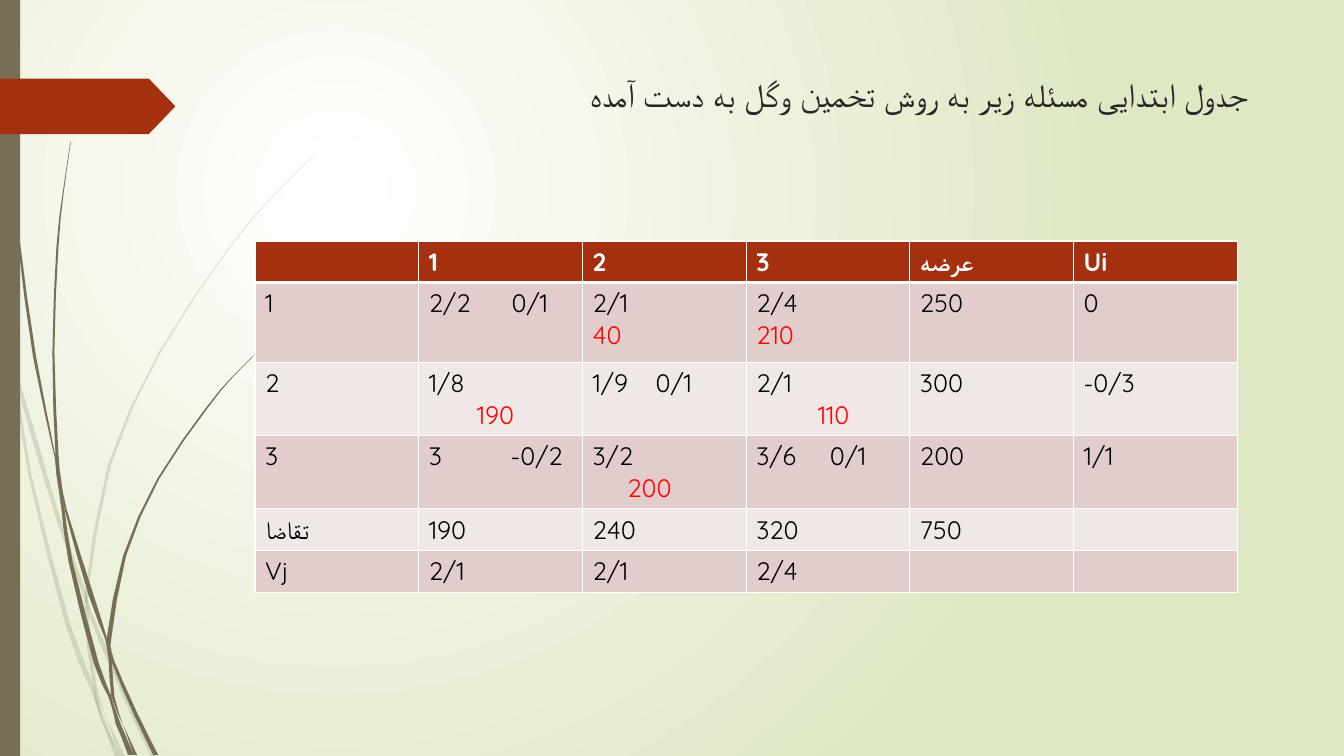
import dataclasses

import pptx
import pptx.dml.color
import pptx.enum.dml
import pptx.enum.shapes
import pptx.enum.text
import pptx.oxml
import pptx.oxml.ns
import pptx.util
from lxml import etree

qn = pptx.oxml.ns.qn


@dataclasses.dataclass(frozen=True)
class Theme:
    """Colours, font and type sizes of the slide."""
    font: str = "Quicksand"
    title: int = 24
    body: int = 18
    dark: str = "262626"
    ink: str = "000000"
    white: str = "FFFFFF"
    red: str = "FF0000"
    rust: str = "A53010"
    olive: str = "766F54"
    edge: str = "DFE8C4"
    bands: tuple = ("F0E8E7", "E1CDCC")


def rgb(code):
    """Turn a hex code into a colour."""
    return pptx.dml.color.RGBColor.from_string(code)


def smooth(knots, steps=2):
    """Run a smooth curve through the knots."""
    ends = [knots[0], *knots, knots[-1]]
    curve = []
    for a, b, c, d in zip(ends, ends[1:], ends[2:], ends[3:]):
        for i in range(steps):
            t = i / steps
            curve.append([
                q + t * (r - p + t * (2 * p - 5 * q + 4 * r - s + t * (3 * q - p - 3 * r + s))) / 2
                for p, q, r, s in zip(a, b, c, d)])
    return curve + [knots[-1]]


class Sheet:
    """Draw on one slide with a grid of 75 rows of square cells."""

    def __init__(self, deck, theme):
        """Add a title-only slide."""
        self.theme = theme
        self.slide = deck.slides.add_slide(deck.slide_layouts[5])
        self.unit = deck.slide_height / 75

    def at(self, *cells):
        """Turn grid cells into lengths."""
        return [pptx.util.Emu(round(n * self.unit)) for n in cells]

    def type(self, para, size, code, bold=False):
        """Set the font of a paragraph, for Latin and Arabic script."""
        font = para.font
        font.name, font.size, font.bold = self.theme.font, pptx.util.Pt(size), bold
        font.color.rgb = rgb(code)
        props = para._p.pPr.find(qn("a:defRPr"))
        etree.SubElement(props, qn("a:cs"), typeface=self.theme.font)

    def paint(self, shape, code, alpha=100):
        """Fill a shape flat, without line or shadow."""
        shape.shadow.inherit = False
        shape.line.fill.background()
        shape.fill.solid()
        shape.fill.fore_color.rgb = rgb(code)
        if alpha < 100:
            tint = shape._element.spPr.find(".//" + qn("a:srgbClr"))
            etree.SubElement(tint, qn("a:alpha"), val=str(alpha * 1000))

    def glow(self, inner, outer):
        """Fill the background with a round gradient."""
        fill = self.slide.background.fill
        fill.gradient()
        for stop, code, place in zip(fill.gradient_stops, (inner, outer), (0, 1)):
            stop.color.rgb, stop.position = rgb(code), place
        grad = self.slide._element.find(".//" + qn("a:gradFill"))
        grad.remove(grad.find(qn("a:lin")))
        ring = etree.SubElement(grad, qn("a:path"), path="circle")
        etree.SubElement(ring, qn("a:fillToRect"), l="50000", t="50000", r="100000", b="100000")

    def shape(self, kind, box, code):
        """Add a flat preset shape."""
        shape = self.slide.shapes.add_shape(kind, *self.at(*box))
        self.paint(shape, code)
        return shape

    def blade(self, knots, code, alpha=100):
        """Add a curved blade through knots of x, y and width."""
        curve = smooth(knots)
        rim = [self.at(x - w / 2, y) for x, y, w in curve]
        rim += [self.at(x + w / 2, y) for x, y, w in reversed(curve) if w]
        form = self.slide.shapes.build_freeform(*rim[0])
        form.add_line_segments(rim[1:], close=True)
        self.paint(form.convert_to_shape(), code, alpha)

    def title(self, text, box):
        """Fill and place the title."""
        head = self.slide.shapes.title
        head.left, head.top, head.width, head.height = self.at(*box)
        frame = head.text_frame
        frame.text = text
        frame.word_wrap = True
        frame.margin_right = self.at(2.1)[0]
        frame.vertical_anchor = pptx.enum.text.MSO_ANCHOR.TOP
        para = frame.paragraphs[0]
        para.alignment = pptx.enum.text.PP_ALIGN.RIGHT
        self.type(para, self.theme.title, self.theme.dark)

    def border(self, cell, top, low):
        """Draw white cell borders."""
        props = cell._tc.get_or_add_tcPr()
        for i, (side, size) in enumerate(zip("LRTB", (1, 1, top, low))):
            line = etree.Element(qn("a:ln" + side), w=str(pptx.util.Pt(size)))
            fill = etree.SubElement(line, qn("a:solidFill"))
            etree.SubElement(fill, qn("a:srgbClr"), val=self.theme.white)
            props.insert(i, line)

    def table(self, rows, spot, wide, highs, gaps):
        """Add the table, with gaps as tab stops or second-line indents."""
        look = self.theme
        size = len(rows), len(rows[0])
        box = self.at(*spot, wide * size[1], sum(highs))
        grid = self.slide.shapes.add_table(*size, *box).table
        for col in grid.columns:
            col.width = self.at(wide)[0]
        for r, (row, high) in enumerate(zip(rows, highs)):
            grid.rows[r].height = self.at(high)[0]
            for c, text in enumerate(row):
                cell = grid.cell(r, c)
                cell.text = text
                cell.fill.solid()
                cell.fill.fore_color.rgb = rgb(look.bands[r % 2] if r else look.rust)
                self.border(cell, 3 if r == 1 else 1, 1 if r else 3)
                gap = str(self.at(gaps.get((r, c), 0))[0])
                for i, para in enumerate(cell.text_frame.paragraphs):
                    props = para._p.get_or_add_pPr()
                    if i:
                        props.set("marL", gap)
                    elif "\t" in text:
                        tabs = etree.SubElement(props, qn("a:tabLst"))
                        etree.SubElement(tabs, qn("a:tab"), pos=gap, algn="l")
                    code = look.red if i else look.ink if r else look.white
                    self.type(para, look.body, code, r == 0)


PALE = [
    [(0, 28.2, 0), (.2, 29.9, .4), (.7, 33, .3), (1.1, 35, 0)],
    [(1.4, 34.5, 0), (1.75, 37.6, .3), (3.35, 43.3, .5), (5.95, 52, .4),
     (8.3, 58.6, .4), (8.4, 59.9, 0)],
    [(8.8, 59.6, 0), (9, 61, .4), (12.5, 69.3, .5), (15.25, 75.1, .5)],
    [(10.5, 71.1, 0), (12.15, 75.1, .5)],
    [(1.1, 35, 0), (1.55, 37.6, .3), (2.95, 47, .3), (6.75, 62, .5),
     (9.2, 68.3, .5), (10.1, 71.4, 0)],
    [(8.4, 59.9, 0), (8.6, 61, .4), (8.9, 64.6, .4), (9.5, 68.3, .3), (10.5, 71.1, 0)],
    [(31.2, 15.3, .05), (26.8, 19.75, .1), (22.85, 24.45, .1), (15.9, 34.85, .2),
     (10.85, 46.15, .3), (8.65, 58.4, .3), (8.8, 59.6, 0)],
    [(10.1, 71.4, 0), (11.65, 75.1, .5)],
    [(8.5, 58.6, 0), (8.6, 59.8, .35), (8.8, 61, 0)],
    [(9.3, 68.3, 0), (10.1, 71.2, .4), (11.9, 75.1, 0)],
]
DARK = [
    [(.35, 0, .1), (.6, 4.8, .1), (.75, 11, .1), (1.8, 23.3, .2), (3.45, 35.5, .3),
     (5.5, 45.5, .1), (5.7, 48.1, 0)],
    [(6, 47.2, 0), (6.5, 50.5, .2), (9.05, 59.1, .5), (10.5, 63.3, .2), (10.6, 64.5, 0)],
    [(11, 64.1, 0), (11.2, 65.6, .3), (13.4, 70.7, .4), (15.45, 74.9, .5)],
    [(5.7, 47.7, 0), (6.25, 50.5, .3), (7, 55.7, .4), (9.55, 65.8, .5),
     (10.9, 69.1, .3), (11.7, 72.2, 0)],
    [(7, 14.1, .05), (6.25, 19.3, .1), (5.7, 24.5, .2), (5.3, 34.9, .2),
     (5.65, 45, .3), (6, 47.2, 0)],
    [(12.2, 71.9, 0), (13.45, 74.9, .3)],
    [(5.5, 44.9, 0), (5.8, 47.2, .4), (6.4, 50.5, 0)],
    [(26.1, 34.4, .05), (23.1, 37.35, .1), (20.45, 40.55, .2), (15.7, 47.5, .2),
     (12.35, 55.15, .3), (10.85, 63.1, .45), (11, 64.1, 0)],
    [(11.7, 72.2, 0), (12.9, 74.9, .4)],
    [(10.6, 64.5, 0), (10.95, 65.6, .3), (11.2, 69.1, .3), (12.2, 71.9, 0)],
    [(10.6, 63.1, 0), (10.8, 64.3, .4), (11.1, 65.6, 0)],
    [(11, 69.1, 0), (11.75, 71.9, .5), (13.15, 74.9, .3)],
]
ROWS = [
    ["", "1", "2", "3", "عرضه", "Ui"],
    ["1", "2/2\t0/1", "2/1\n40", "2/4\n210", "250", "0"],
    ["2", "1/8\n190", "1/9\t0/1", "2/1\n110", "300", "-0/3"],
    ["3", "3\t-0/2", "3/2\n200", "3/6\t0/1", "200", "1/1"],
    ["تقاضا", "190", "240", "320", "750", ""],
    ["Vj", "2/1", "2/1", "2/4", "", ""],
]
GAPS = {(1, 1): 8.2, (2, 1): 4.75, (2, 2): 6.25, (2, 3): 6.1,
        (3, 1): 8.1, (3, 2): 3.45, (3, 3): 7.3}


def main():
    """Build and save the slide."""
    deck = pptx.Presentation()
    deck.slide_width, deck.slide_height = pptx.util.Inches(13.33), pptx.util.Inches(7.5)
    look = Theme()
    sheet = Sheet(deck, look)
    kinds = pptx.enum.shapes.MSO_SHAPE
    sheet.glow(look.white, look.edge)
    for blades, alpha in ((PALE, 20), (DARK, 100)):
        for knots in blades:
            sheet.blade(knots, look.olive, alpha)
    sheet.shape(kinds.RECTANGLE, (0, 0, 2, 75), look.olive)
    flag = sheet.shape(kinds.PENTAGON, (0, 7.8, 17.4, 5.5), look.rust)
    flag.adjustments[0] = .48
    sheet.title("جدول ابتدایی مسئله زیر به روش تخمین وگل به دست آمده", (28.4, 6.8, 97.5, 8.1))
    sheet.table(ROWS, (25.3, 23.9), 16.24, (4.1, 7.9, 7.25, 7.25, 4.1, 4.1), GAPS)
    deck.save("out.pptx")


if __name__ == "__main__":
    main()
